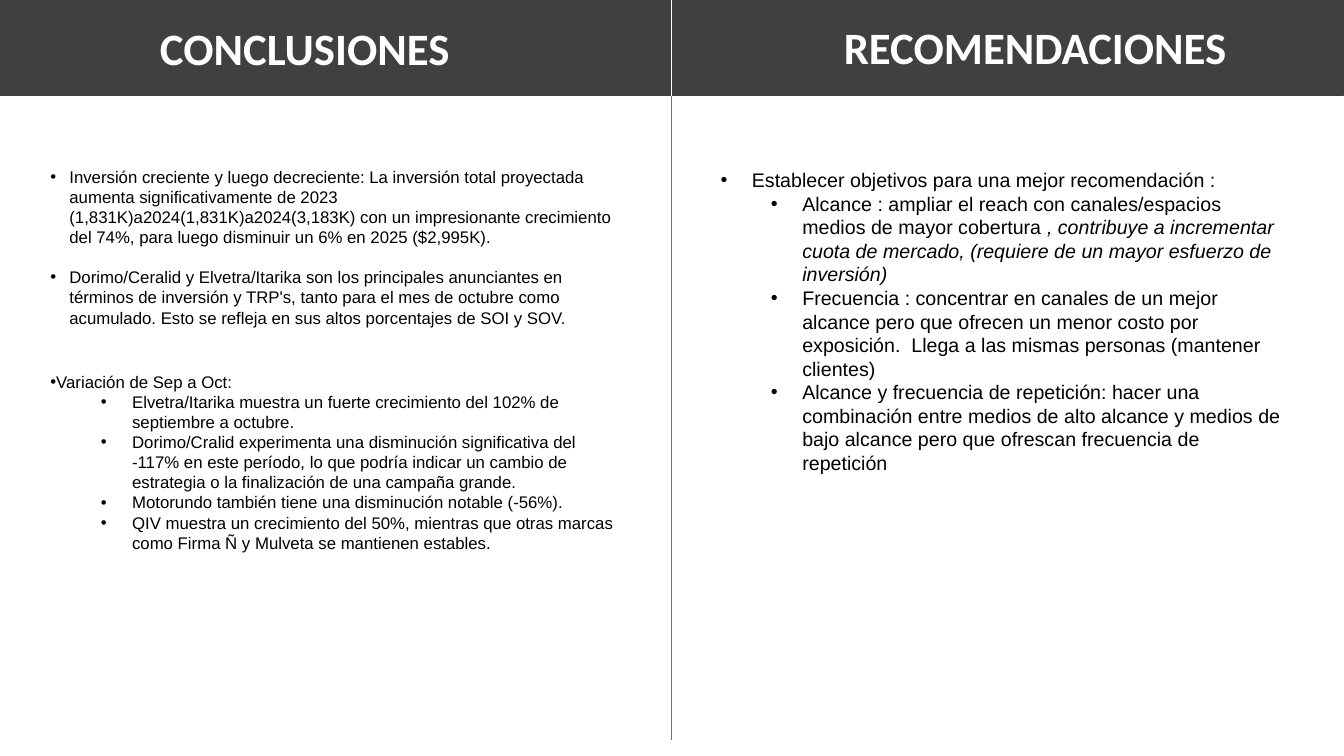
from dataclasses import dataclass

from lxml import etree
from pptx import Presentation
from pptx.dml.color import RGBColor
from pptx.enum import shapes, text
from pptx.oxml import ns
from pptx.util import Cm, Pt


@dataclass(frozen=True)
class Theme:
    band: RGBColor = RGBColor(0x40, 0x40, 0x40)
    divider: RGBColor = RGBColor(0x1D, 0x9A, 0x78)
    white: RGBColor = RGBColor(0xFF, 0xFF, 0xFF)
    ink: RGBColor = RGBColor(0, 0, 0)
    heading_font: str = "Calibri"
    body_font: str = "Arial"
    heading_size: Pt = Pt(32)
    conclusions_size: Pt = Pt(12)
    advice_size: Pt = Pt(14)


THEME = Theme()

# Bullet indents: left margin and hanging width
FLUSH = (Cm(0), Cm(0))
NARROW = (Cm(0.48), Cm(0.48))
WIDE = (Cm(0.79), Cm(0.79))
NESTED = (Cm(2.06), Cm(0.79))

# Each item: indent, space before in points, pieces of text (italic flag)
CONCLUSIONS = [
    (NARROW, 0, [("Inversión creciente y luego decreciente: La inversión total proyectada aumenta "
                  "significativamente de 2023 (1,831K)a2024(1,831K)a2024(3,183K) con un impresionante "
                  "crecimiento del 74%, para luego disminuir un 6% en 2025 ($2,995K).", False)]),
    (NARROW, 14.4, [("Dorimo/Ceralid y Elvetra/Itarika son los principales anunciantes en términos de "
                     "inversión y TRP's, tanto para el mes de octubre como acumulado. Esto se refleja "
                     "en sus altos porcentajes de SOI y SOV.", False)]),
    (FLUSH, 31.2, [("Variación de Sep a Oct:", False)]),
    (NESTED, 0, [("Elvetra/Itarika muestra un fuerte crecimiento del 102% de septiembre a octubre.",
                  False)]),
    (NESTED, 0, [("Dorimo/Cralid experimenta una disminución significativa del -117% en este período, "
                  "lo que podría indicar un cambio de estrategia o la finalización de una campaña "
                  "grande.", False)]),
    (NESTED, 0, [("Motorundo también tiene una disminución notable (-56%).", False)]),
    (NESTED, 0, [("QIV muestra un crecimiento del 50%, mientras que otras marcas como Firma Ñ y Mulveta "
                  "se mantienen estables.", False)]),
]
ADVICE = [
    (WIDE, 0, [("Establecer objetivos para una mejor recomendación :", False)]),
    (NESTED, 0, [("Alcance : ampliar el reach con canales/espacios medios de mayor cobertura ", False),
                 (", contribuye a incrementar cuota de mercado, (requiere de un mayor esfuerzo de "
                  "inversión)", True)]),
    (NESTED, 0, [("Frecuencia : concentrar en canales de un mejor alcance pero que ofrecen un menor "
                  "costo por exposición.  Llega a las mismas personas (mantener clientes)", False)]),
    (NESTED, 0, [("Alcance y frecuencia de repetición: hacer una combinación entre medios de alto "
                  "alcance y medios de bajo alcance pero que ofrescan frecuencia de repetición",
                  False)]),
]


def style(paragraph, font, size, color, bold=False):
    paragraph.font.name = font
    paragraph.font.size = size
    paragraph.font.color.rgb = color
    paragraph.font.bold = bold


def write_heading(frame, heading, align):
    frame.word_wrap = True
    paragraph = frame.paragraphs[0]
    paragraph.text = heading
    paragraph.alignment = align
    style(paragraph, THEME.heading_font, THEME.heading_size, THEME.white, bold=True)


def add_bullet(paragraph, indent):
    margin, hanging = indent
    properties = paragraph._p.get_or_add_pPr()
    properties.set("marL", str(margin))
    properties.set("indent", str(-hanging))
    etree.SubElement(properties, ns.qn("a:buFont"), typeface="Arial")
    etree.SubElement(properties, ns.qn("a:buChar"), char="•")


def add_bullet_list(slide, left, top, width, height, items, size):
    frame = slide.shapes.add_textbox(left, top, width, height).text_frame
    frame.word_wrap = True
    frame.margin_top = Cm(0.76)
    for number, (indent, space, pieces) in enumerate(items):
        paragraph = frame.add_paragraph() if number else frame.paragraphs[0]
        paragraph.level = 1 if indent is NESTED else 0
        add_bullet(paragraph, indent)
        if space:
            paragraph.space_before = Pt(space)
        style(paragraph, THEME.body_font, size, THEME.ink)
        for words, italic in pieces:
            run = paragraph.add_run()
            run.text = words
            if italic:
                run.font.italic = True


def add_band(slide):
    band = slide.shapes.add_shape(shapes.MSO_SHAPE.RECTANGLE, Cm(-0.03), Cm(0), Cm(33.88), Cm(2.41))
    band.shadow.inherit = False
    band.fill.solid()
    band.fill.fore_color.rgb = THEME.band
    band.line.color.rgb = THEME.band
    band.line.width = Pt(1)
    band.text_frame.margin_left = Cm(4.06)
    band.text_frame.vertical_anchor = text.MSO_ANCHOR.MIDDLE
    write_heading(band.text_frame, "CONCLUSIONES", text.PP_ALIGN.LEFT)
    return band


def add_divider(slide, top, bottom, color):
    center = Cm(16.91)
    divider = slide.shapes.add_connector(shapes.MSO_CONNECTOR.STRAIGHT, center, top, center, bottom)
    divider.line.color.rgb = color
    divider.line.width = Pt(0.5)
    etree.SubElement(divider._element.spPr, ns.qn("a:effectLst"))
    return divider


def main():
    deck = Presentation()
    deck.slide_width, deck.slide_height = Cm(33.87), Cm(19.05)
    slide = deck.slides.add_slide(deck.slide_layouts[6])

    # Left column
    add_bullet_list(slide, Cm(1.02), Cm(3.43), Cm(14.94), Cm(13.89),
                    CONCLUSIONS, THEME.conclusions_size)

    # Heading band and the dividers between columns
    band = add_band(slide)
    column_divider = add_divider(slide, Cm(2.41), Cm(18.64), THEME.divider)
    column_divider.begin_connect(band, 2)
    band_divider = add_divider(slide, Cm(0), Cm(2.41), THEME.white)
    band_divider.begin_connect(band, 0)
    band_divider.end_connect(band, 2)

    # Right column
    advice_heading = slide.shapes.add_textbox(Cm(19.56), Cm(0.38), Cm(13.06), Cm(1.63)).text_frame
    write_heading(advice_heading, "RECOMENDACIONES", text.PP_ALIGN.CENTER)
    advice_heading.auto_size = text.MSO_AUTO_SIZE.SHAPE_TO_FIT_TEXT
    add_bullet_list(slide, Cm(17.91), Cm(3.48), Cm(14.71), Cm(7.34), ADVICE, THEME.advice_size)

    deck.save("out.pptx")


if __name__ == "__main__":
    main()
